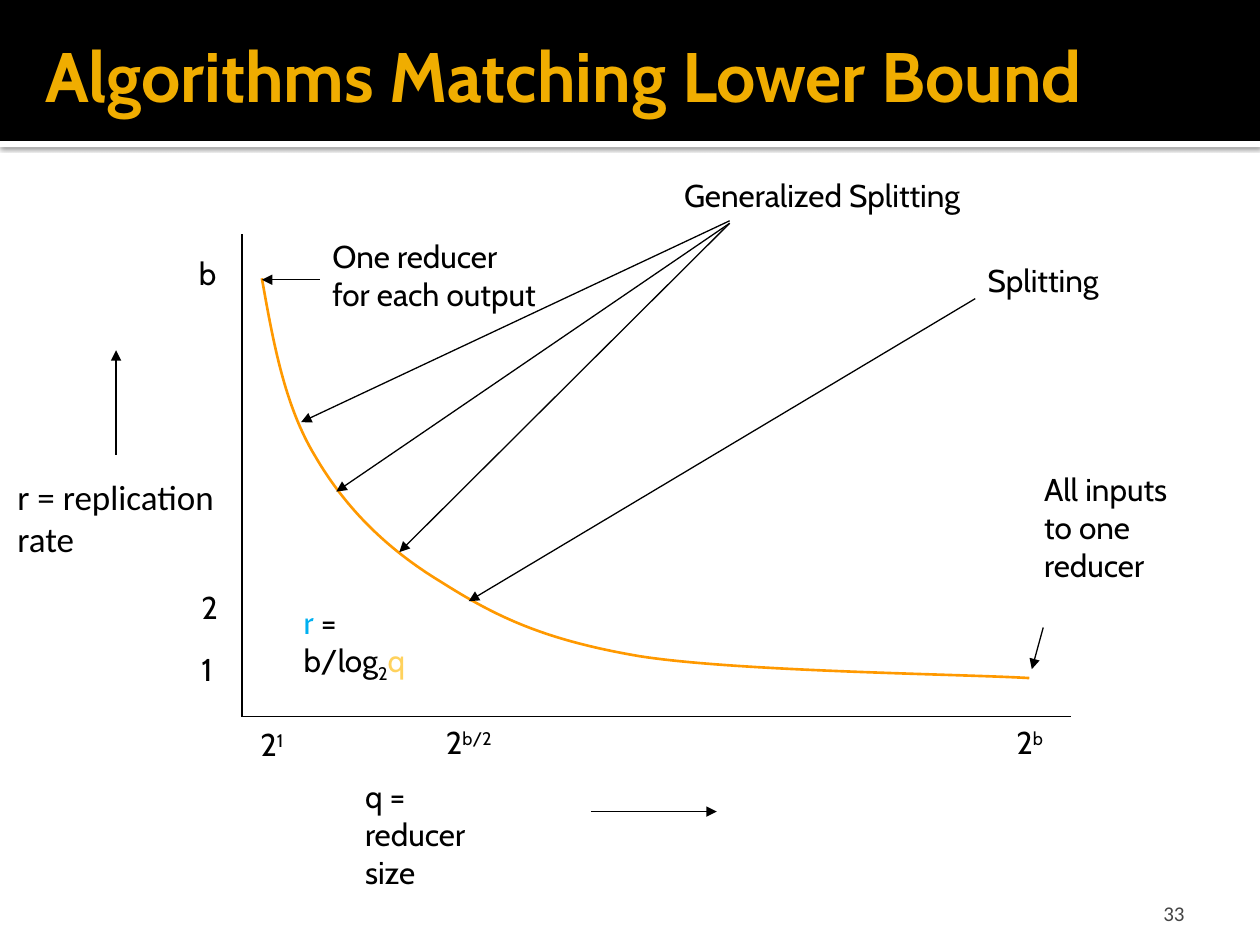
import dataclasses

import lxml.etree
import pptx
import pptx.dml.color
import pptx.enum.shapes
import pptx.enum.text
import pptx.oxml.ns
import pptx.util

Cm, Pt = pptx.util.Cm, pptx.util.Pt
RGB = pptx.dml.color.RGBColor.from_string
qn = pptx.oxml.ns.qn
ANCHOR = pptx.enum.text.MSO_ANCHOR
ALIGN = pptx.enum.text.PP_ALIGN
AUTO = pptx.enum.text.MSO_AUTO_SIZE


@dataclasses.dataclass(frozen=True)
class Theme:
    head_font: str = "Cabin"
    body_font: str = "Calibri"
    ink: str = "000000"
    paper: str = "FFFFFF"
    title: str = "F0AD00"
    curve: str = "FF9900"
    rate: str = "00B0F0"
    size: str = "FFD25D"
    number: str = "454545"
    title_pt: int = 40
    label_pt: int = 18
    axis_pt: int = 20
    number_pt: int = 12


T = Theme()
SUP, SUB = 30000, -25000

# The curve's start, then two control points and an end point per segment
CURVE = [
    (5.28, 5.61),
    (5.51, 6.91), (5.74, 8.18), (6.35, 9.19),
    (6.96, 10.24), (7.8, 11.07), (8.89, 11.73),
    (9.98, 12.42), (10.95, 12.9), (12.9, 13.23),
    (14.88, 13.54), (19.43, 13.59), (20.75, 13.67),
]
ORIGIN, Y_END, X_END = (4.88, 14.45), (4.88, 4.72), (21.59, 14.45)
ARROWS = [
    ((11.91, 16.36), (14.45, 16.36)),
    ((2.34, 9.17), (2.34, 7.06)),
    ((21.03, 12.65), (20.8, 13.49)),
    ((6.45, 5.64), (5.28, 5.64)),
    ((19.66, 6.02), (9.45, 12.12)),
    ((14.71, 4.45), (6.07, 8.51)),
    ((14.71, 4.5), (6.78, 9.91)),
    ((14.71, 4.5), (8.05, 11.13)),
]
# Box in cm, then the paragraphs; a run is text or (text, changes)
LABELS = [
    ((7.11, 15.54, 3.45, 2.57), [["q = reducer"], ["size"]]),
    ((3.76, 5, 0.86, 1.02), [["b"]]),
    ((3.81, 11.73, 0.84, 1.02), [["2"]]),
    ((3.81, 12.98, 0.84, 1.02), [["1"]]),
    ((5, 14.5, 1.07, 1.02), [["2", ("1", {"baseline": SUP})]]),
    ((8.74, 14.45, 1.52, 1.02), [["2", ("b/2", {"baseline": SUP})]]),
    ((20.24, 14.45, 1.09, 1.02), [["2", ("b", {"baseline": SUP})]]),
    ((20.8, 9.35, 3.23, 2.57), [["All inputs"], ["to one"], ["reducer"]]),
    ((6.45, 4.65, 5, 1.8), [["One reducer"], ["for each output"]]),
    ((19.66, 5.13, 2.92, 1.02), [["Splitting"]]),
    ((13.54, 3.43, 6.58, 1.02), [["Generalized Splitting"]]),
    ((5.87, 12.04, 3.23, 1.02), [[("r ", {"color": T.rate}), "= b/log",
                                  ("2", {"baseline": SUB}),
                                  ("q", {"color": T.size})]]),
]


def set_all(obj, values):
    for name, value in values.items():
        setattr(obj, name, value)


def add_run(p, text, font, size, color=T.ink, bold=False, baseline=None):
    r = p.add_run()
    r.text = text
    set_all(r.font, {"name": font, "size": Pt(size), "bold": bold})
    r.font.color.rgb = RGB(color)
    if baseline is not None:
        r.font._element.set("baseline", str(baseline))


def add_label(s, box, lines, font=T.head_font, size=T.label_pt, **style):
    tf = s.shapes.add_textbox(*map(Cm, box)).text_frame
    set_all(tf, {"word_wrap": True, "auto_size": AUTO.SHAPE_TO_FIT_TEXT})
    for i, runs in enumerate(lines):
        p = tf.add_paragraph() if i else tf.paragraphs[0]
        for run in runs:
            text, changes = (run, {}) if isinstance(run, str) else run
            add_run(p, text, font, size, **{**style, **changes})
    return tf


def add_line(s, start, end, arrow=False):
    c = s.shapes.add_connector(pptx.enum.shapes.MSO_CONNECTOR.STRAIGHT,
                               *map(Cm, start + end))
    c.line.color.rgb = RGB(T.ink)
    c.line.width = Pt(0.75)
    if arrow:
        lxml.etree.SubElement(c.line._get_or_add_ln(), qn("a:tailEnd"),
                              type="triangle")
    lxml.etree.SubElement(c._element.spPr, qn("a:effectLst"))


def add_bar(s, top, height, color):
    sp = s.shapes.add_shape(pptx.enum.shapes.MSO_SHAPE.RECTANGLE,
                            0, Cm(top), Cm(25.4), Cm(height))
    sp.shadow.inherit = False
    sp.fill.solid()
    sp.fill.fore_color.rgb = RGB(color)
    sp.line.fill.background()
    return sp


def add_soft_shadow(sp):
    effects = sp._element.spPr.find(qn("a:effectLst"))
    shadow = lxml.etree.SubElement(effects, qn("a:outerShdw"), blurRad=str(Pt(2.5)),
                                   dist=str(Pt(0.8)), dir="5400000")
    color = lxml.etree.SubElement(shadow, qn("a:srgbClr"), val=T.ink)
    lxml.etree.SubElement(color, qn("a:alpha"), val="60000")


def add_curve(s, points):
    """Draw the points as a chain of cubic Bezier segments."""
    start, *rest = [(Cm(x), Cm(y)) for x, y in points]
    fb = s.shapes.build_freeform(*start)
    fb.add_line_segments(rest, close=False)
    sp = fb.convert_to_shape()
    steps = list(sp._element.iter(qn("a:lnTo")))
    for i in range(0, len(steps), 3):
        bezier = lxml.etree.Element(qn("a:cubicBezTo"))
        steps[i].addprevious(bezier)
        for step in steps[i:i + 3]:
            bezier.append(step[0])
            step.getparent().remove(step)
    sp.shadow.inherit = False
    sp.fill.background()
    sp.line.color.rgb = RGB(T.curve)
    sp.line.width = Pt(1.5)


def set_title(s, text):
    sp = s.shapes.title
    s.shapes._spTree.append(sp._element)  # in front of the bars
    set_all(sp, {"left": Cm(0.66), "top": Cm(0.53),
                 "width": Cm(23.67), "height": Cm(1.96)})
    tf = sp.text_frame
    set_all(tf, {"vertical_anchor": ANCHOR.MIDDLE, "word_wrap": True,
                 "auto_size": AUTO.NONE})
    p = tf.paragraphs[0]
    p.alignment = ALIGN.LEFT
    add_run(p, text, T.head_font, T.title_pt, T.title, bold=True)


def add_slide_number(s, text):
    tf = add_label(s, (18.21, 17.65, 5.92, 1.02), [[text]], T.body_font,
                   T.number_pt, color=T.number)
    set_all(tf, {"auto_size": AUTO.NONE, "vertical_anchor": ANCHOR.BOTTOM,
                 "margin_bottom": 0})
    tf.paragraphs[0].alignment = ALIGN.RIGHT


def main():
    prs = pptx.Presentation()
    set_all(prs, {"slide_width": Cm(25.4), "slide_height": Cm(19.05)})
    s = prs.slides.add_slide(prs.slide_layouts[5])
    add_soft_shadow(add_bar(s, 2.84, 0.13, T.paper))
    add_bar(s, 0, 2.84, T.ink)
    set_title(s, "Algorithms Matching Lower Bound")
    add_curve(s, CURVE)
    for end in (Y_END, X_END):
        add_line(s, ORIGIN, end)
    for start, end in ARROWS:
        add_line(s, start, end, arrow=True)
    for box, lines in LABELS:
        add_label(s, box, lines)
    add_label(s, (0.1, 9.47, 4.52, 1.96), [["r = replication"], ["rate"]],
              T.body_font, T.axis_pt)
    add_slide_number(s, "33")
    prs.save("out.pptx")


if __name__ == "__main__":
    main()
